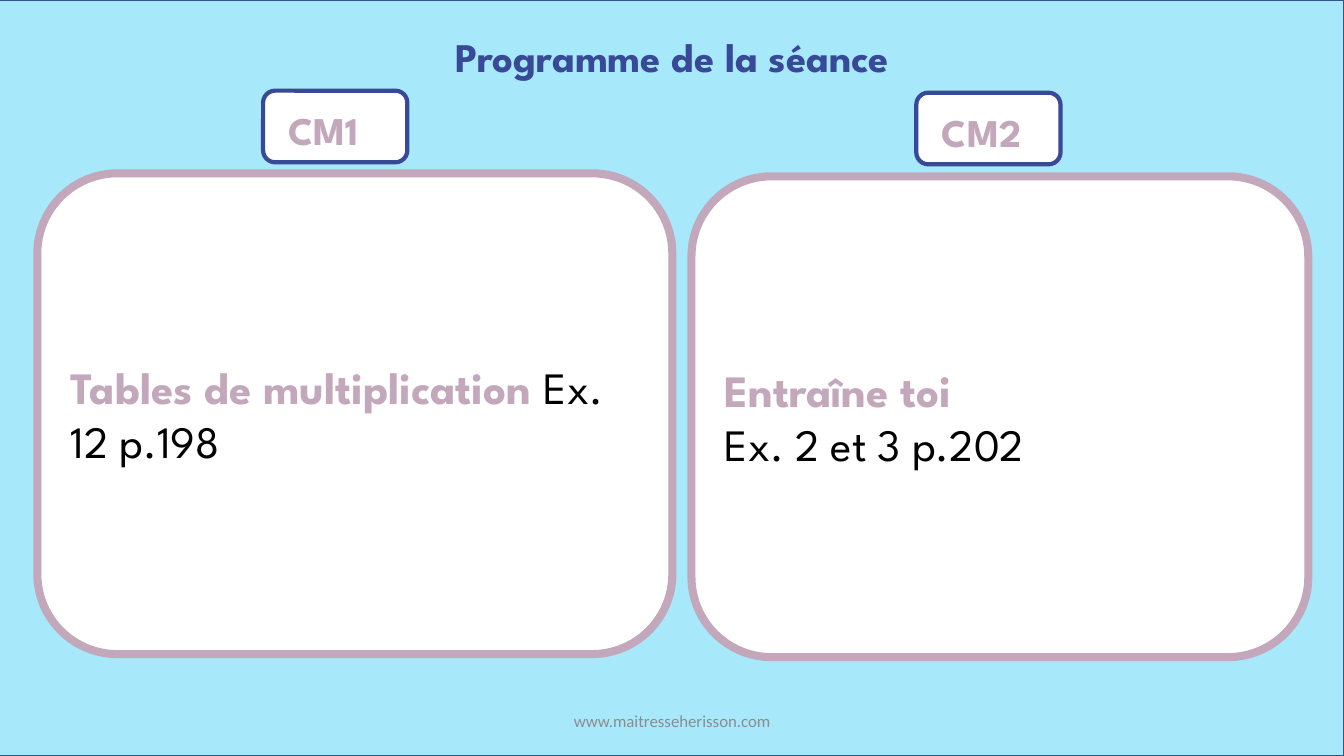
"""Build the lesson plan slide with one panel per class."""
from dataclasses import dataclass
from typing import Optional

from pptx import Presentation
from pptx import util as u
from pptx.dml.color import RGBColor
from pptx.enum import shapes, text

WIDE, HIGH = u.Inches(13.333), u.Inches(7.5)
HUES = {"sky": "A7E8FB", "edge": "325491", "white": "FFFFFF", "navy": "374997",
        "mauve": "C3A7BA", "black": "000000", "grey": "8C8C8C"}
ROUND = shapes.MSO_SHAPE.ROUNDED_RECTANGLE
LEFT, MID = text.PP_ALIGN.LEFT, text.PP_ALIGN.CENTER
TOP, HALF = text.MSO_ANCHOR.TOP, text.MSO_ANCHOR.MIDDLE


@dataclass(frozen=True)
class Box:
    """Place and size in percent of the slide."""
    x: float
    y: float
    w: float
    h: float

    def rect(self) -> tuple[int, int, int, int]:
        """Give left, top, width and height in slide units."""
        return (round(WIDE * self.x / 100), round(HIGH * self.y / 100),
                round(WIDE * self.w / 100), round(HIGH * self.h / 100))


@dataclass(frozen=True)
class Run:
    """A stretch of text in one style."""
    words: str
    size: float
    hue: str
    bold: bool = True
    font: str = "League Spartan"


@dataclass(frozen=True)
class Group:
    """One class: its badge, its panel and the lines of its task."""
    name: str
    badge: Box
    panel: Box
    lines: list[list[Run]]


GROUPS = [
    Group("CM1", Box(19.58, 12, 10.73, 9.47), Box(2.78, 22.93, 47.25, 63.6),
          [[Run("Tables de multiplication ", 32, "mauve"),
            Run("Ex. 12 p.198", 32, "black", False)]]),
    Group("CM2", Box(68.18, 12.27, 10.73, 9.47), Box(51.45, 23.33, 45.9, 63.6),
          [[Run("Entraîne toi", 32, "mauve")],
           [Run("Ex. 2 et 3 p.202", 32, "black", False)]]),
]


def tint(hue: str) -> RGBColor:
    """Turn a named hue into a colour."""
    return RGBColor.from_string(HUES[hue])


def write(shape, lines: list[list[Run]], align=LEFT, anchor=TOP) -> None:
    """Fill a shape with lines of runs."""
    frame = shape.text_frame
    frame.word_wrap = True
    frame.vertical_anchor = anchor
    for i, line in enumerate(lines):
        para = frame.add_paragraph() if i else frame.paragraphs[0]
        para.alignment = align
        for part in line:
            run = para.add_run()
            run.text = part.words
            run.font.size = u.Pt(part.size)
            run.font.bold = part.bold
            run.font.name = part.font
            run.font.color.rgb = tint(part.hue)


def block(slide, kind, box: Box, fill: str, edge: str, width: float,
          lines: Optional[list[list[Run]]] = None) -> None:
    """Draw a filled and outlined shape."""
    shape = slide.shapes.add_shape(kind, *box.rect())
    shape.shadow.inherit = False
    shape.fill.solid()
    shape.fill.fore_color.rgb = tint(fill)
    shape.line.color.rgb = tint(edge)
    shape.line.width = u.Pt(width)
    if lines:
        write(shape, lines, anchor=HALF)


def label(slide, box: Box, run: Run, align=LEFT, anchor=TOP) -> None:
    """Draw a text box of one line."""
    write(slide.shapes.add_textbox(*box.rect()), [[run]], align, anchor)


def main() -> None:
    """Build and save the slide."""
    deck = Presentation()
    deck.slide_width, deck.slide_height = WIDE, HIGH
    slide = deck.slides.add_slide(deck.slide_layouts[6])
    block(slide, shapes.MSO_SHAPE.RECTANGLE, Box(-0.05, 0, 100, 100), "sky", "edge", 1)
    label(slide, Box(0.05, 3.6, 100, 7.87), Run("Programme de la séance", 29, "navy"), MID)
    for group in GROUPS:
        badge = group.badge
        block(slide, ROUND, badge, "white", "navy", 3)
        label(slide, Box(badge.x + 1.16, badge.y + 1.47, 8.25, 7.6),
              Run(group.name, 28, "mauve"))
        block(slide, ROUND, group.panel, "white", "mauve", 5.75, group.lines)
    label(slide, Box(33.15, 92.67, 33.75, 5.33),
          Run("www.maitresseherisson.com", 12, "grey", False, "Calibri"), MID, HALF)
    deck.save("out.pptx")


if __name__ == "__main__":
    main()
